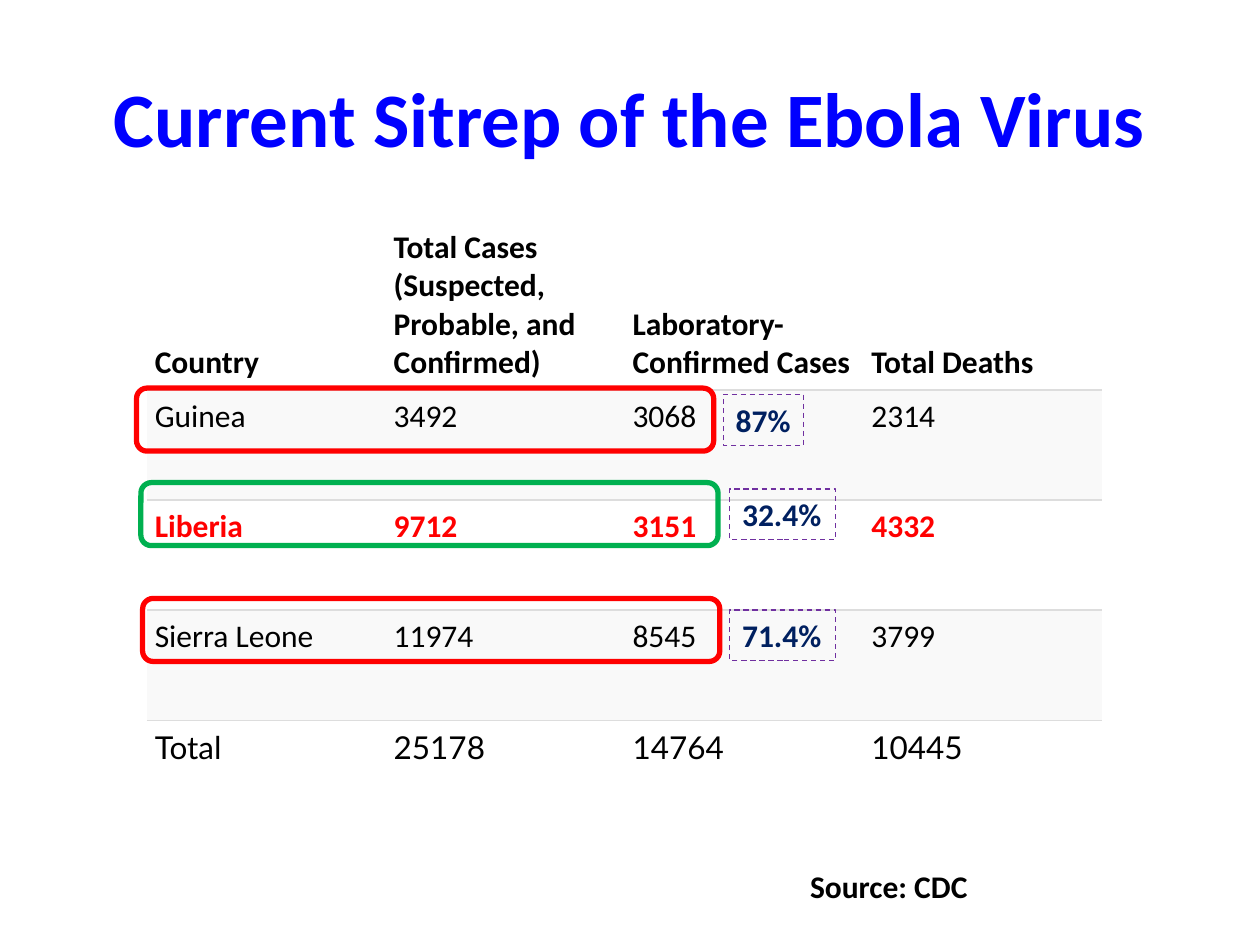
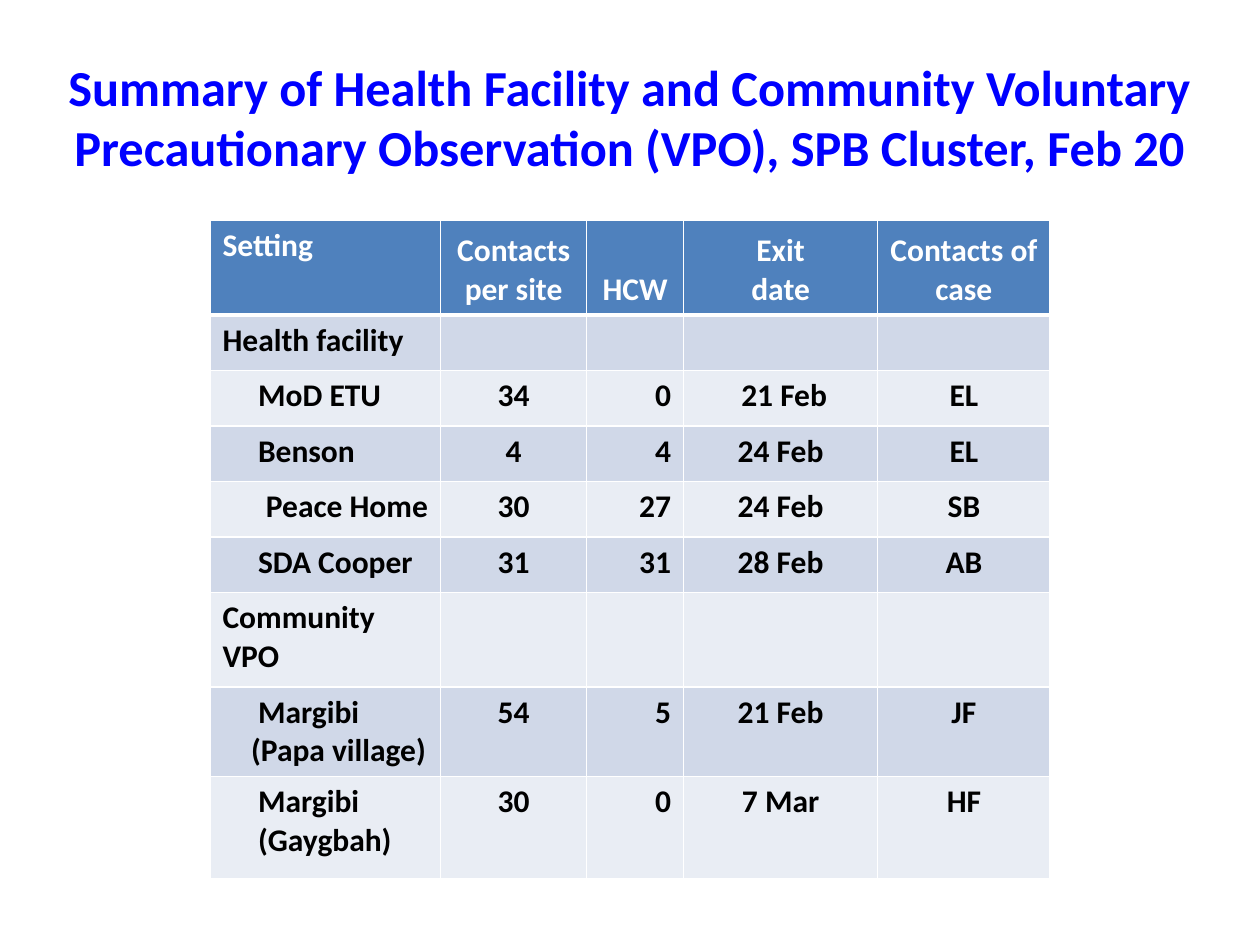
from lxml.etree import SubElement
from pptx import Presentation
from pptx.dml.color import RGBColor
from pptx.enum.dml import MSO_LINE
from pptx.enum.shapes import MSO_SHAPE
from pptx.enum.text import MSO_ANCHOR, MSO_AUTO_SIZE, PP_ALIGN
from pptx.oxml.ns import qn
from pptx.util import Pt

BLACK, WHITE, RED, GREEN = "000000", "FFFFFF", "FF0000", "00B050"
TITLE_BLUE, NAVY, PURPLE = "0000FF", "002060", "7030A0"
PALE_GREY, RULE_GREY = "F9F9F9", "DDDDDD"
HEADER_BLUE, BAND_DARK, BAND_LIGHT = "4F81BD", "D0D8E8", "E9EDF4"
LEFT, CENTER, RIGHT = PP_ALIGN.LEFT, PP_ALIGN.CENTER, PP_ALIGN.RIGHT
BODY = {"name": "Calibri", "size": Pt(18), "bold": True, "color": BLACK}

CASE_ROWS = [
    ["Country", "Total Cases (Suspected, Probable, and Confirmed)",
     "Laboratory-Confirmed Cases", "Total Deaths"],
    ["Guinea", "3492", "3068", "2314"],
    ["Liberia", "9712", "3151", "4332"],
    ["Sierra Leone", "11974", "8545", "3799"],
    ["Total", "25178", "14764", "10445"],
]
CASE_FORMATS = [{}, {"bold": False}, {"color": RED}, {"bold": False},
                {"bold": False, "name": "Lato"}]
# Frame colour, frame left and top, then share text, left, top and width
CONFIRMED_SHARES = [
    (RED, 78, 221.8, "87%", 413.3, 225.4, 46),
    (GREEN, 80.5, 275.8, "32.4%", 417, 279.4, 60.5),
    (RED, 81.5, 342, "71.4%", 417, 348.5, 60.5),
]
SITE_ROWS = [
    ["Setting", "Contacts per site", "HCW", "Exit\ndate", "Contacts of case"],
    ["Health facility"],
    ["MoD ETU", "34", "0", "21 Feb", "EL"],
    ["Benson", "4", "4", "24 Feb", "EL"],
    ["Peace Home", "30", "27", "24 Feb", "SB"],
    ["SDA Cooper", "31", "31", "28 Feb", "AB"],
    ["Community VPO"],
    ["Margibi\n(Papa village)", "54", "5", "21 Feb", "JF"],
    ["Margibi\n(Gaygbah)", "30", "0", "7 Mar", "HF"],
]
SITE_ALIGNS = [LEFT, CENTER, RIGHT, CENTER, CENTER]
SITE_INDENT = 20.3


def rgb(code):
    return RGBColor.from_string(code)


def write(frame, text, align=LEFT, indents=(0,), **changes):
    """Fill a text frame, one paragraph a line; the last indent repeats."""
    frame.text = text
    for number, para in enumerate(frame.paragraphs):
        para.alignment = align
        indent = indents[min(number, len(indents) - 1)]
        if indent:
            para._p.get_or_add_pPr().set("marL", str(Pt(indent)))
        for span in para.runs:
            for key, value in {**BODY, **changes}.items():
                if key == "color":
                    span.font.color.rgb = rgb(value)
                else:
                    setattr(span.font, key, value)


def add_page(deck, title, left, width, size):
    page = deck.slides.add_slide(deck.slide_layouts[5])
    box = page.shapes.title
    box.left, box.top, box.width, box.height = map(Pt, (left, 21.6, width, 90))
    write(box.text_frame, title, CENTER, size=Pt(size), color=TITLE_BLUE)
    box.text_frame.auto_size = MSO_AUTO_SIZE.NONE
    box.text_frame.vertical_anchor = MSO_ANCHOR.MIDDLE
    return page


def add_grid(page, left, top, widths, heights):
    table = page.shapes.add_table(len(heights), len(widths), Pt(left), Pt(top),
                                  Pt(sum(widths)), Pt(sum(heights))).table
    for column, width in zip(table.columns, widths):
        column.width = Pt(width)
    for row, height in zip(table.rows, heights):
        row.height = Pt(height)
    return table


def paint_cell(cell, fill, borders):
    """Set the fill and the borders, given as side: (colour, width)."""
    properties = cell._tc.get_or_add_tcPr()
    for side in "LRTB":
        line = SubElement(properties, qn(f"a:ln{side}"))
        if side in borders:
            color, width = borders[side]
            line.set("w", str(Pt(width)))
            solid = SubElement(line, qn("a:solidFill"))
            SubElement(solid, qn("a:srgbClr")).set("val", color)
        else:
            SubElement(line, qn("a:noFill"))
    cell.fill.solid()
    cell.fill.fore_color.rgb = rgb(fill)


def add_case_table(page, left, top):
    table = add_grid(page, left, top, [136.5] * 4, [96] + [62.9] * 4)
    rule = (RULE_GREY, 0.75)
    last = len(CASE_ROWS) - 1
    for r, (row, changes) in enumerate(zip(CASE_ROWS, CASE_FORMATS)):
        borders = {"T": rule} if r else {}
        if r < last:
            borders["B"] = rule
        for c, text in enumerate(row):
            cell = table.cell(r, c)
            for side in ("left", "top", "right", "bottom"):
                setattr(cell, f"margin_{side}", Pt(4.5))
            if r == 0:
                cell.vertical_anchor = MSO_ANCHOR.BOTTOM
            paint_cell(cell, PALE_GREY if r % 2 else WHITE, borders)
            write(cell.text_frame, text, **changes)


def add_outline(page, kind, left, top, width, height, color, weight):
    box = page.shapes.add_shape(kind, Pt(left), Pt(top), Pt(width), Pt(height))
    box.shadow.inherit = False
    box.fill.background()
    box.line.color.rgb = rgb(color)
    box.line.width = Pt(weight)
    return box


def add_confirmed_share(page, color, left, top, share, tag_left, tag_top, tag_width):
    """Frame a country's cases and tag them with the confirmed share."""
    add_outline(page, MSO_SHAPE.ROUNDED_RECTANGLE, left, top, 329.8, 36, color, 3)
    tag = add_outline(page, MSO_SHAPE.RECTANGLE, tag_left, tag_top, tag_width, 29,
                      PURPLE, 0.75)
    tag.line.dash_style = MSO_LINE.DASH
    tag.text_frame.word_wrap = False
    write(tag.text_frame, share, color=NAVY)


def add_source(page, left, top):
    box = page.shapes.add_textbox(Pt(left), Pt(top), Pt(104.4), Pt(29))
    box.text_frame.word_wrap = False
    write(box.text_frame, "Source: CDC")


def site_format(r, c, text):
    """Return the alignment and paragraph indents of a site table cell."""
    if r == 0:
        return (CENTER if c else LEFT), (0,)
    if text == "Peace Home":
        return RIGHT, (0,)
    if c == 0 and len(SITE_ROWS[r]) > 1:
        return LEFT, (SITE_INDENT, 16.3 if "Papa" in text else SITE_INDENT)
    return SITE_ALIGNS[c], (4 if (r, c) == (2, 3) else 0,)


def add_site_table(page, left, top):
    table = add_grid(page, left, top, [131.8, 83.5, 55.4, 110.9, 98.6],
                     [54] + [31.7] * 5 + [54, 51, 58.3])
    for r, row in enumerate(SITE_ROWS):
        borders = dict.fromkeys("LRTB", (WHITE, 1))
        if r < 2:
            borders["T" if r else "B"] = (WHITE, 3)
        fill = (BAND_DARK if r % 2 else BAND_LIGHT) if r else HEADER_BLUE
        for c in range(len(table.columns)):
            cell = table.cell(r, c)
            paint_cell(cell, fill, borders)
            if c >= len(row):
                continue
            if r == 0 and c:
                cell.vertical_anchor = MSO_ANCHOR.BOTTOM
            align, indents = site_format(r, c, row[c])
            write(cell.text_frame, row[c], align, indents,
                  color=BLACK if r else WHITE)


def main():
    deck = Presentation()
    deck.slide_width, deck.slide_height = Pt(720), Pt(540)

    page = add_page(deck, "Current Sitrep of the Ebola Virus", 36, 648, 44)
    add_case_table(page, 84, 126)
    add_source(page, 455.8, 492)
    for share in CONFIRMED_SHARES:
        add_confirmed_share(page, *share)

    page = add_page(deck, "Summary of Health Facility and Community Voluntary "
                    "Precautionary Observation (VPO), SPB Cluster, Feb 20",
                    18, 684, 28.8)
    add_site_table(page, 120, 126)
    deck.save("out.pptx")


if __name__ == "__main__":
    main()
